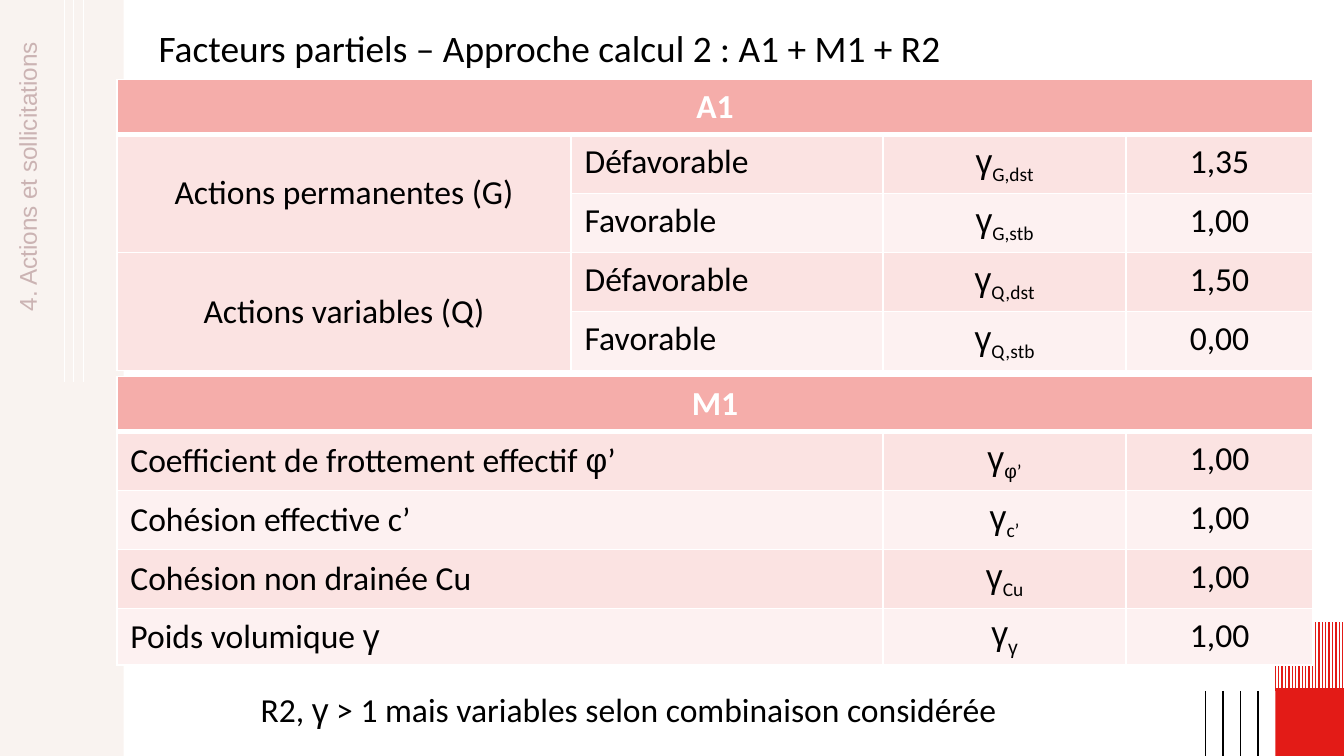
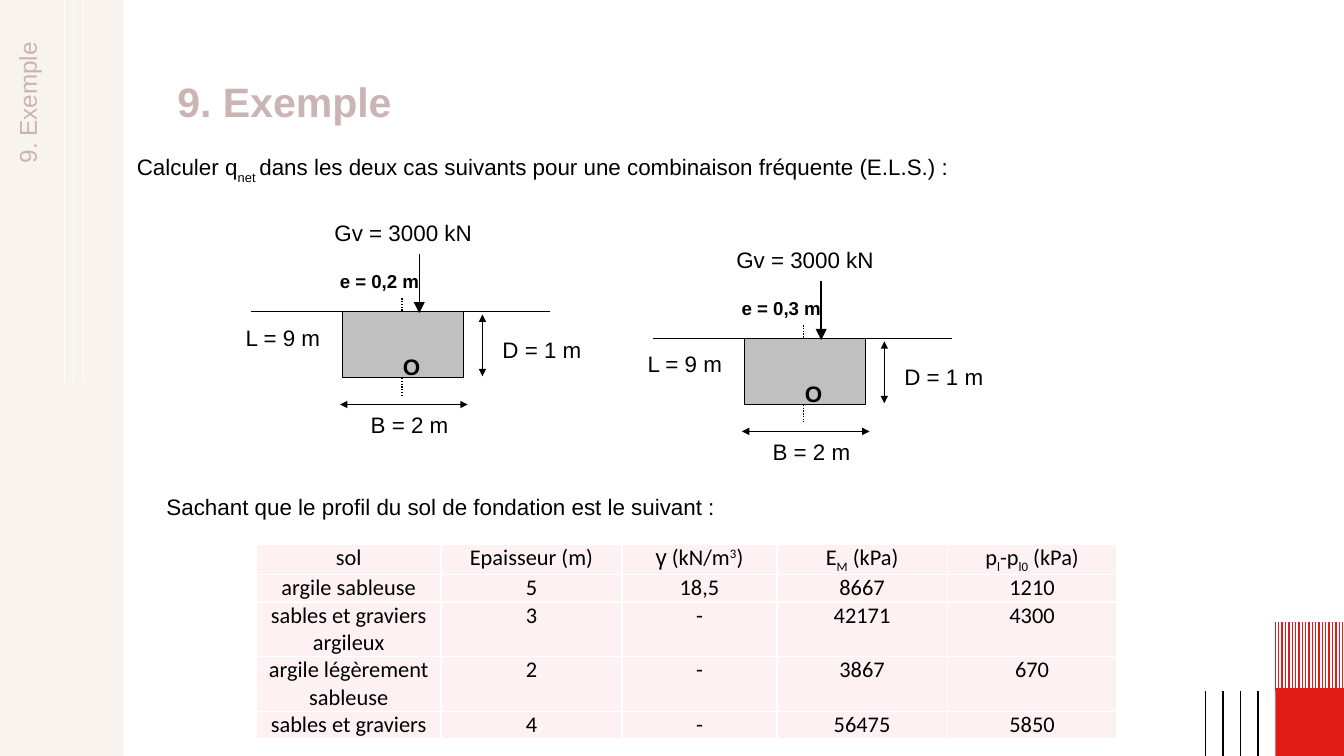
"""Build two course slides: partial safety factors and a footing example."""
from dataclasses import dataclass
from typing import Any, Optional

from lxml import etree
from pptx import Presentation
from pptx import util as u
from pptx.dml.color import RGBColor
from pptx.enum import dml, shapes, text
from pptx.oxml import ns

LEFT, CENTER, RIGHT = text.PP_ALIGN.LEFT, text.PP_ALIGN.CENTER, text.PP_ALIGN.RIGHT
TOP, MIDDLE, BOTTOM = text.MSO_ANCHOR.TOP, text.MSO_ANCHOR.MIDDLE, text.MSO_ANCHOR.BOTTOM


@dataclass(frozen=True)
class Theme:
    red: str = "E31B17"
    black: str = "000000"
    white: str = "FFFFFF"
    band: str = "F8F0EC"
    chapter: str = "CBB3B3"
    heading: str = "CBB4B4"
    concrete: str = "C0C0C0"
    header: str = "F5ADAA"
    tint: str = "FBE3E2"
    pale: str = "FDF1F1"
    sans: str = "Arial"
    table: str = "Calibri"
    title_size: int = 20
    heading_size: int = 22
    factor_size: int = 18
    chapter_size: int = 13
    body_size: int = 12
    small_size: int = 10


THEME = Theme()


@dataclass(frozen=True)
class Span:
    text: str
    font: Optional[str] = None
    baseline: int = 0


@dataclass(frozen=True)
class Style:
    size: int = THEME.body_size
    font: str = THEME.sans
    color: str = THEME.black
    bold: bool = False
    align: Any = LEFT
    anchor: Any = TOP
    wrap: bool = True
    spacing: float = 1.0


@dataclass(frozen=True)
class Label:
    left: float
    top: float
    width: float
    height: float
    spans: tuple[Span, ...]
    style: Style = Style()


@dataclass(frozen=True)
class Stroke:
    x1: float
    y1: float
    x2: float
    y2: float
    color: str = THEME.black
    width: float = 0.75
    arrows: tuple[str, ...] = ()
    dotted: bool = False


@dataclass(frozen=True)
class Grid:
    left: float
    top: float
    height: float
    widths: tuple[float, ...]
    rows: tuple[tuple[tuple[Span, ...], ...], ...]
    aligns: tuple[Any, ...]
    size: int
    heading: bool = False
    merges: tuple[tuple[int, int, int, int], ...] = ()
    heights: tuple[float, ...] = ()


@dataclass(frozen=True)
class Footing:
    dx: float
    dy: float
    eccentricity: str


def plain(words: str) -> tuple[Span, ...]:
    return (Span(words),)


def low(words: str, font: Optional[str] = None, baseline: int = -25) -> Span:
    return Span(words, font, baseline)


GAMMA = Span("γ", THEME.sans)


def rgb(color: str) -> RGBColor:
    return RGBColor.from_string(color)


def write(frame: Any, spans: tuple[Span, ...], style: Style) -> None:
    para = frame.paragraphs[0]
    para.alignment = style.align
    para.line_spacing = style.spacing
    for item in spans:
        span = para.add_run()
        span.text = item.text
        span.font.name = item.font or style.font
        span.font.size = u.Pt(style.size)
        span.font.bold = style.bold
        span.font.color.rgb = rgb(style.color)
        if item.baseline:
            span._r.get_or_add_rPr().set("baseline", str(item.baseline * 1000))


def fill_box(box: Any, label: Label) -> None:
    box.left, box.top = u.Inches(label.left), u.Inches(label.top)
    box.width, box.height = u.Inches(label.width), u.Inches(label.height)
    frame = box.text_frame
    frame.auto_size = text.MSO_AUTO_SIZE.NONE
    frame.word_wrap = label.style.wrap
    frame.vertical_anchor = label.style.anchor
    write(frame, label.spans, label.style)


def draw_label(page: Any, label: Label) -> Any:
    box = page.shapes.add_textbox(0, 0, 0, 0)
    fill_box(box, label)
    return box


def draw_stroke(page: Any, stroke: Stroke) -> None:
    ends = (u.Inches(value) for value in (stroke.x1, stroke.y1, stroke.x2, stroke.y2))
    connector = page.shapes.add_connector(shapes.MSO_CONNECTOR.STRAIGHT, *ends)
    connector.line.color.rgb = rgb(stroke.color)
    connector.line.width = u.Pt(stroke.width)
    if stroke.dotted:
        connector.line.dash_style = dml.MSO_LINE.ROUND_DOT
    scale = "sm" if len(stroke.arrows) == 2 else "med"
    for end in stroke.arrows:
        etree.SubElement(connector.line._get_or_add_ln(), ns.qn(f"a:{end}"), type="triangle", w=scale, len=scale)
    etree.SubElement(connector._element.spPr, ns.qn("a:effectLst"))


def draw_block(page: Any, left: float, top: float, width: float, height: float,
               color: str, outline: Optional[str] = None) -> Any:
    block = page.shapes.add_shape(shapes.MSO_SHAPE.RECTANGLE, u.Inches(left), u.Inches(top),
                                  u.Inches(width), u.Inches(height))
    block.shadow.inherit = False
    block.fill.solid()
    block.fill.fore_color.rgb = rgb(color)
    if outline:
        block.line.color.rgb = rgb(outline)
        block.line.width = u.Pt(0.75)
    else:
        block.line.fill.background()
    return block


def draw_hatch(page: Any, left: float, top: float, bottom: float) -> None:
    xs = [u.Inches(left + 0.5 * step / 20) for step in range(21)]
    builder = page.shapes.build_freeform(xs[0], u.Inches(bottom))
    for x in xs:
        builder.move_to(x, u.Inches(bottom))
        builder.add_line_segments([(x, u.Inches(top))], close=False)
    hatch = builder.convert_to_shape()
    hatch.shadow.inherit = False
    hatch.fill.background()
    hatch.line.color.rgb = rgb(THEME.red)
    hatch.line.width = u.Pt(0.75)


def add_page(deck: Any, chapter: str, title: Label) -> Any:
    page = deck.slides.add_slide(deck.slide_layouts[5])
    fill_box(page.shapes.title, title)
    draw_hatch(page, 9.49, 4.63, 5.14)
    draw_block(page, 9.49, 5.12, 0.51, 0.51, THEME.red)
    for index in range(4):
        x = 8.97 + 0.13 * index
        draw_stroke(page, Stroke(x, 5.14, x, 5.63, width=1))
    band = draw_block(page, -0.01, 0, 0.93, 5.63, THEME.band)
    color = band._element.spPr.find(".//" + ns.qn("a:srgbClr"))
    etree.SubElement(color, ns.qn("a:alpha"), val="75000")
    for index in range(3):
        x = 0.48 + 0.07 * index
        draw_stroke(page, Stroke(x, -0.02, x, 2.84, THEME.white, 0.5))
    style = Style(THEME.chapter_size, color=THEME.chapter, align=RIGHT, anchor=MIDDLE, spacing=0.9)
    draw_label(page, Label(-1.99, 2.25, 4.41, 0.34, plain(chapter), style)).rotation = 270
    return page


def set_borders(cell: Any, top: float, bottom: float) -> None:
    properties = cell._tc.get_or_add_tcPr()
    for side, width in (("L", 1), ("R", 1), ("T", top), ("B", bottom)):
        line = etree.SubElement(properties, ns.qn(f"a:ln{side}"), w=str(u.Pt(width)))
        solid = etree.SubElement(line, ns.qn("a:solidFill"))
        etree.SubElement(solid, ns.qn("a:srgbClr"), val=THEME.white)


def draw_grid(page: Any, grid: Grid) -> None:
    table = page.shapes.add_table(len(grid.rows), len(grid.widths), u.Inches(grid.left), u.Inches(grid.top),
                                  u.Inches(sum(grid.widths)), u.Inches(grid.height)).table
    table.first_row = table.horz_banding = False
    for column, width in zip(table.columns, grid.widths):
        column.width = u.Inches(width)
    for row, height in zip(table.rows, grid.heights):
        row.height = u.Inches(height)
    for r, row in enumerate(grid.rows):
        is_head = grid.heading and r == 0
        for c, align in enumerate(grid.aligns):
            cell = table.cell(r, c)
            set_borders(cell, 3 if grid.heading and r == 1 else 1, 3 if is_head else 1)
            cell.fill.solid()
            banded = THEME.tint if grid.heading and r % 2 else THEME.pale
            cell.fill.fore_color.rgb = rgb(THEME.header if is_head else banded)
            if grid.heights:
                cell.margin_left = cell.margin_right = u.Inches(0.05)
                cell.margin_top = cell.margin_bottom = 0
            elif c == 0 and not is_head:
                cell.vertical_anchor = MIDDLE
            if c < len(row):
                write(cell.text_frame, row[c],
                      Style(grid.size, THEME.table, THEME.white if is_head else THEME.black,
                            is_head, CENTER if is_head else align))
    for r1, c1, r2, c2 in grid.merges:
        table.cell(r1, c1).merge(table.cell(r2, c2))


def draw_footing(page: Any, footing: Footing) -> None:
    dx, dy = footing.dx, footing.dy

    def stroke(x1: float, y1: float, x2: float, y2: float, *arrows: str, dotted: bool = False) -> None:
        draw_stroke(page, Stroke(x1 + dx, y1 + dy, x2 + dx, y2 + dy, arrows=arrows, dotted=dotted))

    stroke(2.99, 2.22, 2.99, 2.94, dotted=True)
    stroke(1.87, 2.32, 4.09, 2.32)
    draw_block(page, 2.55 + dx, 2.32 + dy, 0.9, 0.49, THEME.concrete, THEME.black)
    stroke(3.12, 1.89, 3.12, 2.33, "tailEnd")
    stroke(2.53, 3.01, 3.48, 3.01, "headEnd", "tailEnd")
    stroke(3.59, 2.34, 3.59, 2.8, "headEnd", "tailEnd")
    for left, top, width, height, words, style in (
        (2.39, 1.58, 1.31, 0.32, "Gv = 3000 kN", Style()),
        (2.66, 3.01, 0.85, 0.27, "B = 2 m", Style()),
        (2.9, 2.58, 0.54, 0.3, "O", Style(bold=True)),
        (1.73, 2.36, 0.85, 0.27, "L = 9 m", Style()),
        (3.64, 2.45, 0.85, 0.27, "D = 1 m", Style()),
        (2.43, 1.96, 0.85, 0.27, footing.eccentricity, Style(THEME.small_size, bold=True)),
    ):
        draw_label(page, Label(left + dx, top + dy, width, height, plain(words), style))


def build_factors(deck: Any) -> None:
    title = Label(1.08, 0.14, 6.08, 0.44, plain("Facteurs partiels – Approche calcul 2 : A1 + M1 + R2"),
                  Style(THEME.title_size, THEME.table, wrap=False))
    page = add_page(deck, "4. Actions et sollicitations", title)
    actions = tuple(
        (plain(name) if case == "Défavorable" else (), plain(case), (GAMMA, low(f"{letter},{suffix}")), plain(value))
        for name, letter, values in (("Actions permanentes (G)", "G", ("1,35", "1,00")),
                                     ("Actions variables (Q)", "Q", ("1,50", "0,00")))
        for case, suffix, value in zip(("Défavorable", "Favorable"), ("dst", "stb"), values))
    draw_grid(page, Grid(0.87, 0.59, 2.05, (3.38, 2.32, 1.81, 1.39), ((plain("A1"),), *actions),
                         (CENTER, LEFT, CENTER, CENTER), THEME.factor_size, True,
                         ((0, 0, 0, 3), (1, 0, 2, 0), (3, 0, 4, 0))))
    materials = tuple((name, (GAMMA, *index), plain("1,00")) for name, index in (
        ((Span("Coefficient de frottement effectif "), Span("φ", THEME.sans), Span("’")),
         (low("φ", THEME.sans), low("’"))),
        (plain("Cohésion effective c’"), (low("c’"),)),
        (plain("Cohésion non drainée Cu"), (low("Cu"),)),
        ((Span("Poids volumique "), GAMMA), (low("γ", THEME.sans),))))
    draw_grid(page, Grid(0.87, 2.8, 2.05, (5.7, 1.81, 1.39), ((plain("M1"),), *materials),
                         (LEFT, CENTER, CENTER), THEME.factor_size, True, ((0, 0, 0, 2),)))
    remark = (Span("R2, "), GAMMA, Span(" > 1 mais variables selon combinaison considérée"))
    draw_label(page, Label(1.84, 5.08, 5.72, 0.4, remark, Style(THEME.factor_size, THEME.table, wrap=False)))


def build_example(deck: Any) -> None:
    title = Label(1.22, 0.49, 8.27, 0.57, plain("9. Exemple"),
                  Style(THEME.heading_size, color=THEME.heading, bold=True, anchor=MIDDLE, spacing=0.9))
    page = add_page(deck, "9. Exemple", title)
    header = (plain("sol"), plain("Epaisseur (m)"), (GAMMA, Span(" (kN/m"), Span("3", baseline=30), Span(")")),
              (Span("E"), low("M"), Span(" (kPa)")),
              (Span("p"), low("l"), Span("-p"), low("l0"), Span(" (kPa)")))
    soils = (("argile sableuse", "5", "18,5", "8667", "1210"),
             ("sables et graviers argileux", "3", "-", "42171", "4300"),
             ("argile légèrement sableuse", "2", "-", "3867", "670"),
             ("sables et graviers", "4", "-", "56475", "5850"))
    rows = (header, *(tuple(plain(value) for value in soil) for soil in soils))
    draw_grid(page, Grid(1.91, 4.05, 1.4, (1.37, 1.35, 1.15, 1.27, 1.26), rows, (CENTER,) * 5,
                         THEME.body_size, heights=(0.2, 0.2, 0.4, 0.4, 0.2)))
    for footing in (Footing(2.99, 0.2, "e = 0,3 m"), Footing(0, 0, "e = 0,2 m")):
        draw_footing(page, footing)
    question = (Span("Calculer q"), low("net ", baseline=-30),
                Span("dans les deux cas suivants pour une combinaison fréquente (E.L.S.) :"))
    draw_label(page, Label(0.92, 1.09, 7.44, 0.61, question))
    draw_label(page, Label(1.14, 3.52, 4.88, 0.4, plain("Sachant que le profil du sol de fondation est le suivant :"),
                           Style(anchor=BOTTOM)))


def main() -> None:
    deck = Presentation()
    deck.slide_width = u.Inches(10)
    deck.slide_height = deck.slide_width * 9 // 16
    build_factors(deck)
    build_example(deck)
    deck.save("out.pptx")


if __name__ == "__main__":
    main()
